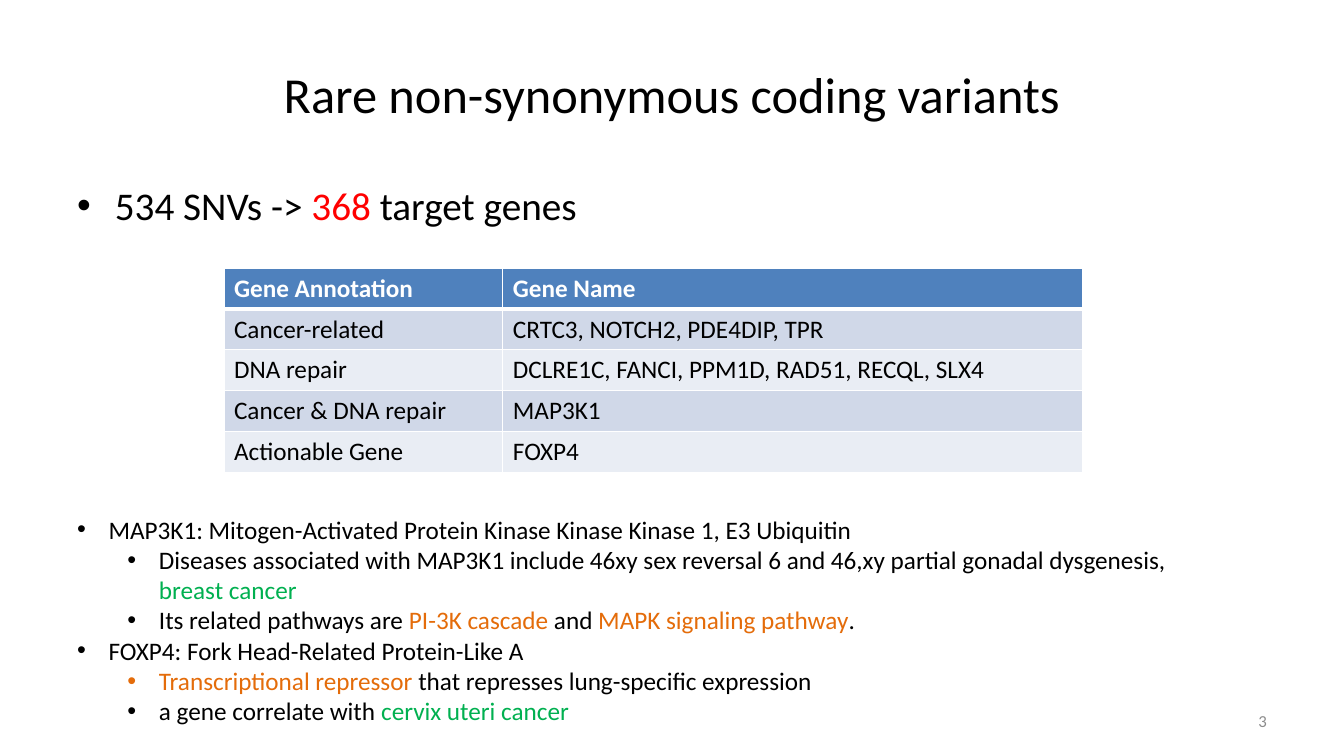
import pptx
import pptx.util
import pptx.dml.color
import pptx.enum.text
import pptx.oxml.ns
from lxml import etree

Pt = pptx.util.Pt
ALIGN = pptx.enum.text.PP_ALIGN
ANCHOR = pptx.enum.text.MSO_ANCHOR
FONT = "Calibri"
COLORS = {
    "text": "000000",
    "white": "FFFFFF",
    "red": "FF0000",
    "green": "00B050",
    "orange": "E46C0A",
    "gray": "8C8C8C",
    "header": "4F81BD",
    "band_dark": "D0D8E8",
    "band_light": "E9EDF4",
}
GENES = [
    ("Gene Annotation", "Gene Name"),
    ("Cancer-related", "CRTC3, NOTCH2, PDE4DIP, TPR"),
    ("DNA repair", "DCLRE1C, FANCI, PPM1D, RAD51, RECQL, SLX4"),
    ("Cancer & DNA repair", "MAP3K1"),
    ("Actionable Gene", "FOXP4"),
]
SUMMARY = [
    (0, [("534 SNVs -> ", "text"), ("368", "red"), (" target genes", "text")]),
]
NOTES = [
    (0, [("MAP3K1: Mitogen-Activated Protein Kinase Kinase Kinase 1, E3 Ubiquitin", "text")]),
    (1, [("Diseases associated with MAP3K1 include 46xy sex reversal 6 and "
          "46,xy partial gonadal dysgenesis, ", "text"), ("breast cancer", "green")]),
    (1, [("Its related pathways are ", "text"), ("PI-3K cascade", "orange"),
         (" and ", "text"), ("MAPK signaling pathway", "orange"), (".", "text")]),
    (0, [("FOXP4: Fork Head-Related Protein-Like A", "text")]),
    (1, [("Transcriptional repressor ", "orange"),
         ("that represses lung-specific expression", "text")]),
    (1, [("a gene correlate with ", "text"), ("cervix uteri cancer", "green")]),
]


def rgb(name):
    return pptx.dml.color.RGBColor.from_string(COLORS[name])


def sub(parent, tag, **attrs):
    return etree.SubElement(parent, pptx.oxml.ns.qn(tag), **attrs)


def set_font(p, size, color=None, bold=False):
    p.font.name = FONT
    p.font.size = Pt(size)
    p.font.bold = bold
    if color:
        p.font.color.rgb = rgb(color)


def add_box(s, left, top, width, height, anchor=ANCHOR.TOP):
    sp = s.shapes.add_textbox(Pt(left), Pt(top), Pt(width), Pt(height))
    tf = sp.text_frame
    tf.word_wrap = True
    tf.vertical_anchor = anchor
    return tf


def add_label(s, box, text, size, color, align):
    p = add_box(s, *box, anchor=ANCHOR.MIDDLE).paragraphs[0]
    p.text = text
    p.alignment = align
    set_font(p, size, color)


def add_bullets(s, box, items, size, hang):
    tf = add_box(s, *box)
    for i, (level, runs) in enumerate(items):
        p = tf.add_paragraph() if i else tf.paragraphs[0]
        p.level = level
        pPr = p._p.get_or_add_pPr()
        pPr.set("marL", str(Pt(hang + 36 * level)))
        pPr.set("indent", str(-Pt(hang)))
        sub(pPr, "a:buFont", typeface="Arial")
        sub(pPr, "a:buChar", char="•")
        set_font(p, size)
        for text, color in runs:
            r = p.add_run()
            r.text = text
            r.font.color.rgb = rgb(color)


def set_borders(cell, widths):
    tcPr = cell._tc.get_or_add_tcPr()
    for i, (side, width) in enumerate(widths.items()):
        ln = etree.Element(pptx.oxml.ns.qn("a:ln" + side), w=str(Pt(width)))
        sub(sub(ln, "a:solidFill"), "a:srgbClr", val=COLORS["white"])
        tcPr.insert(i, ln)


def add_gene_table(s, left, top, col_widths, row_height):
    rows = len(GENES)
    table = s.shapes.add_table(rows, len(col_widths), Pt(left), Pt(top),
                               Pt(sum(col_widths)), Pt(row_height * rows)).table
    for col, width in zip(table.columns, col_widths):
        col.width = Pt(width)
    for i, texts in enumerate(GENES):
        table.rows[i].height = Pt(row_height)
        fill = "header" if i == 0 else ("band_light", "band_dark")[i % 2]
        for j, text in enumerate(texts):
            cell = table.cell(i, j)
            cell.fill.solid()
            cell.fill.fore_color.rgb = rgb(fill)
            p = cell.text_frame.paragraphs[0]
            p.text = text
            set_font(p, 18, "text" if i else "white", bold=i == 0)
            set_borders(cell, {"L": 1, "R": 1, "T": 3 if i == 1 else 1,
                               "B": 1 if i else 3})


def main():
    prs = pptx.Presentation()
    prs.slide_width, prs.slide_height = Pt(960), Pt(540)
    s = prs.slides.add_slide(prs.slide_layouts[6])
    add_label(s, (48, 21.6, 864, 90), "Rare non-synonymous coding variants",
              36, "text", ALIGN.CENTER)
    add_bullets(s, (48, 126, 864, 356.4), SUMMARY, 28, 27)
    add_label(s, (688, 500.5, 224, 28.8), "3", 12, "gray", ALIGN.RIGHT)
    add_gene_table(s, 160, 191.5, (199.2, 413.8), 29.2)
    add_bullets(s, (48, 363.6, 795, 160), NOTES, 18, 22.5)
    prs.save("out.pptx")


if __name__ == "__main__":
    main()
